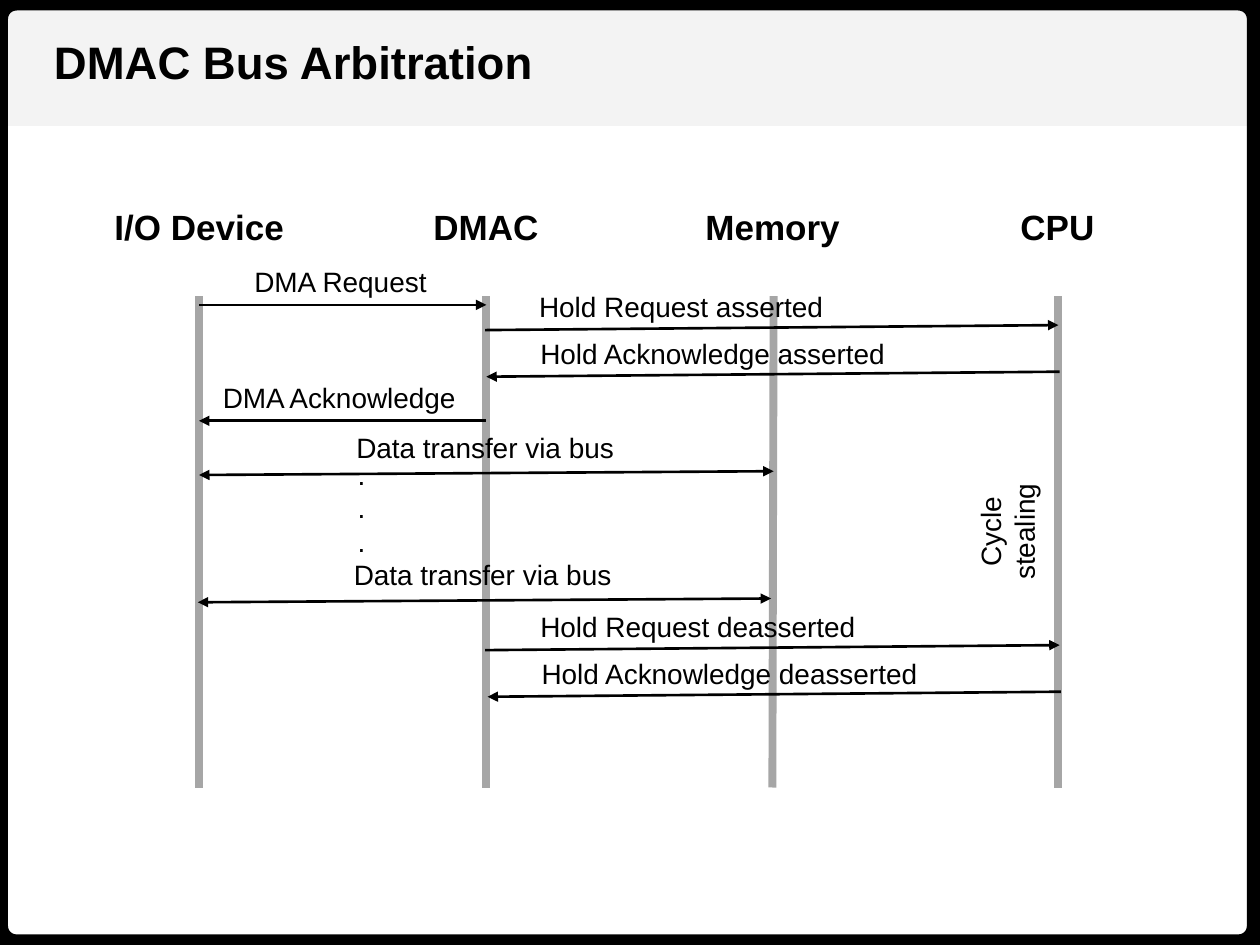
from lxml import etree
from pptx import Presentation
from pptx.dml.color import RGBColor
from pptx.enum import shapes, text
from pptx.oxml.ns import qn
from pptx.util import Inches, Pt

COLORS = {"ink": "000000", "band": "F3F3F3", "lifeline": "A6A6A6"}
FORMATS = {
    "title": {"size": Pt(26), "bold": True},
    "actor": {"size": Pt(20), "bold": True},
    "label": {"size": Pt(16), "bold": False},
}
ACTORS = [("I/O Device", 0.81, 1.56, 1.58, 1.58), ("DMAC", 3.34, 1.05, 3.86, 3.86),
          ("Memory", 5.5, 1.28, 6.14, 6.13), ("CPU", 8, 0.8, 8.4, 8.4)]
MESSAGES = [
    ("DMA Request", 1.92, 2.05, 1.58, (1.58, 2.42, 3.86, 2.42), ["tail"]),
    ("Hold Request asserted", 4.18, 2.25, 2.48, (3.85, 2.62, 8.4, 2.58), ["tail"]),
    ("Hold Acknowledge asserted", 4.19, 2.62, 2.97, (3.86, 2.99, 8.41, 2.95), ["head"]),
    ("DMA Acknowledge", 1.67, 2.97, 2.07, (1.58, 3.34, 3.86, 3.34), ["head"]),
    ("Data transfer via bus", 2.73, 3.37, 2.27, (1.58, 3.77, 6.14, 3.74), ["head", "tail"]),
    ("Data transfer via bus", 2.71, 4.38, 2.27, (1.57, 4.78, 6.12, 4.75), ["head", "tail"]),
    ("Hold Request deasserted", 4.19, 4.79, 2.73, (3.85, 5.16, 8.41, 5.12), ["tail"]),
    ("Hold Acknowledge deasserted", 4.2, 5.16, 3.22, (3.87, 5.53, 8.42, 5.49), ["head"]),
]


def rgb(name):
    return RGBColor.from_string(COLORS[name])


class SlideBuilder:
    font = "Arial"

    def __init__(self, slide):
        self.slide = slide

    def box(self, kind, x, y, w, h, fill=None, line=None, width=0, radius=None):
        sp = self.slide.shapes.add_shape(kind, *map(Inches, (x, y, w, h)))
        sp.shadow.inherit = False
        if radius is not None:
            sp.adjustments[0] = radius
        if fill:
            sp.fill.solid()
            sp.fill.fore_color.rgb = rgb(fill)
        else:
            sp.fill.background()
        if line:
            sp.line.color.rgb = rgb(line)
            sp.line.width = Pt(width)
        else:
            sp.line.fill.background()

    def label(self, lines, x, y, w, h, style="label", align=None, rotation=0):
        sp = self.slide.shapes.add_textbox(*map(Inches, (x, y, w, h)))
        sp.rotation = rotation
        tf = sp.text_frame
        tf.word_wrap = False
        tf.auto_size = text.MSO_AUTO_SIZE.SHAPE_TO_FIT_TEXT
        for i, line in enumerate(lines):
            p = tf.add_paragraph() if i else tf.paragraphs[0]
            p.alignment = align
            r = p.add_run()
            r.text = line
            for name, value in FORMATS[style].items():
                setattr(r.font, name, value)
            r.font.name = self.font
            r.font.color.rgb = rgb("ink")

    def line(self, points, color="ink", width=1.5, ends=()):
        sp = self.slide.shapes.add_connector(shapes.MSO_CONNECTOR.STRAIGHT, *map(Inches, points))
        sp.line.color.rgb = rgb(color)
        sp.line.width = Pt(width)
        props = sp._element.spPr
        for end in ends:
            etree.SubElement(props.find(qn("a:ln")), qn(f"a:{end}End"), type="triangle")
        etree.SubElement(props, qn("a:effectLst"))


def main():
    prs = Presentation()
    prs.slide_width, prs.slide_height = Inches(10), Inches(7.5)
    s = SlideBuilder(prs.slides.add_slide(prs.slide_layouts[6]))

    s.box(shapes.MSO_SHAPE.RECTANGLE, 0, 0, 10, 1, fill="band")
    s.box(shapes.MSO_SHAPE.ROUNDED_RECTANGLE, -0.02, 0, 10, 7.5, line="ink", width=12, radius=0.02)
    s.label(["DMAC Bus Arbitration"], 0.33, 0.22, 4.04, 0.54, "title")

    for name, x, w, top, bottom in ACTORS:
        s.label([name], x, 1.58, w, 0.44, "actor")
        s.line((top, 2.35, bottom, 6.25), "lifeline", 4.5)

    for label, x, y, w, points, ends in MESSAGES:
        s.line(points, ends=ends)
        s.label([label], x, y, w, 0.37)

    s.label(["."] * 3, 2.74, 3.58, 0.27, 0.91)
    s.label(["Cycle", "stealing"], 7.51, 3.9, 0.97, 0.64, align=text.PP_ALIGN.CENTER, rotation=270)
    prs.save("out.pptx")


if __name__ == "__main__":
    main()
